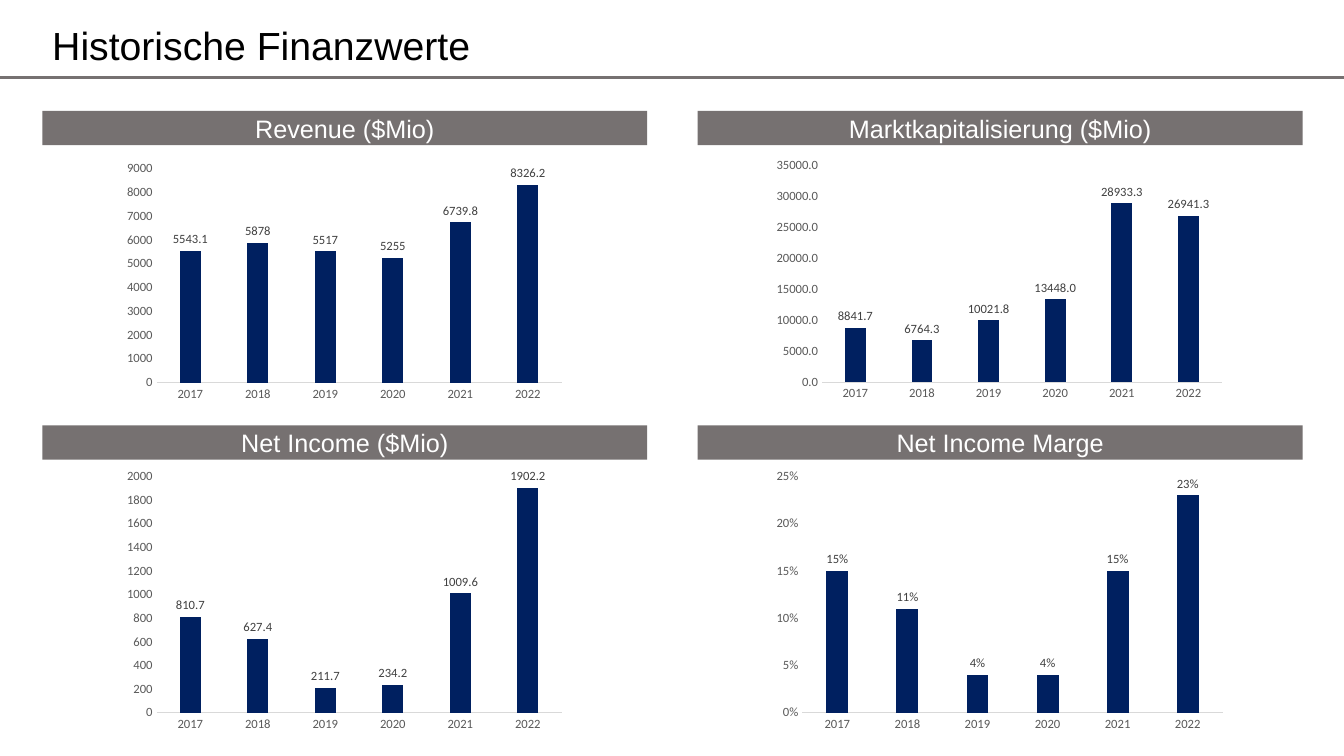
"""Build a slide with four column charts of historical financial figures."""
import pptx
import pptx.chart.data
import pptx.dml.color
import pptx.enum.chart
import pptx.enum.shapes
import pptx.enum.text
import pptx.oxml
import pptx.util

TITLE = "Historische Finanzwerte"
YEARS = ["2017", "2018", "2019", "2020", "2021", "2022"]
REVENUE = [5543.1, 5878, 5517, 5255, 6739.8, 8326.2]
MARKET_CAP = [8841.7, 6764.3, 10021.8, 13448.0, 28933.3, 26941.3]
NET_INCOME = [810.7, 627.4, 211.7, 234.2, 1009.6, 1902.2]
MARGIN = [round(income / revenue, 2) for income, revenue in zip(NET_INCOME, REVENUE)]

PANELS = [
    ("Revenue ($Mio)", REVENUE, "General", 9000, 1000, (1.17, 1.55, 4.49, 2.48)),
    ("Marktkapitalisierung ($Mio)", MARKET_CAP, "0.0", 35000, 5000, (7.61, 1.52, 4.6, 2.51)),
    ("Net Income ($Mio)", NET_INCOME, "General", 2000, 200, (1.17, 4.6, 4.49, 2.71)),
    ("Net Income Marge", MARGIN, "0%", 0.25, 0.05, (7.61, 4.6, 4.61, 2.71)),
]

WIDTH, HEIGHT = 13.33, 7.5
LEFT, TOP = 0.42, 1.1
COLUMN_STEP, ROW_STEP = 6.5, 3.12
HEADING_SIZE = (6, 0.34)
RULE_Y = 0.77

BLACK = pptx.dml.color.RGBColor(0x00, 0x00, 0x00)
WHITE = pptx.dml.color.RGBColor(0xFF, 0xFF, 0xFF)
GRAY = pptx.dml.color.RGBColor(0x76, 0x71, 0x71)
NAVY = pptx.dml.color.RGBColor(0x00, 0x20, 0x60)
AXIS_TEXT = pptx.dml.color.RGBColor(0x59, 0x59, 0x59)
AXIS_LINE = pptx.dml.color.RGBColor(0xD9, 0xD9, 0xD9)
LABEL_TEXT = pptx.dml.color.RGBColor(0x40, 0x40, 0x40)


def inches(*lengths):
    return [pptx.util.Inches(length) for length in lengths]


def set_font(font, name, size, color):
    font.name = name
    font.size = pptx.util.Pt(size)
    font.color.rgb = color


def write_text(shape, text, *, size, color, align, line_spacing=1.0):
    frame = shape.text_frame
    frame.word_wrap = True
    frame.vertical_anchor = pptx.enum.text.MSO_ANCHOR.MIDDLE
    paragraph = frame.paragraphs[0]
    paragraph.alignment = align
    paragraph.line_spacing = line_spacing
    run = paragraph.add_run()
    run.text = text
    set_font(run.font, "Arial", size, color)


def add_heading(slide, text, left, top):
    shape = slide.shapes.add_shape(
        pptx.enum.shapes.MSO_SHAPE.RECTANGLE, *inches(left, top, *HEADING_SIZE))
    shape.shadow.inherit = False
    shape.fill.solid()
    shape.fill.fore_color.rgb = GRAY
    shape.line.fill.background()
    write_text(shape, text, size=18, color=WHITE, align=pptx.enum.text.PP_ALIGN.CENTER)


def add_rule(slide):
    connector = slide.shapes.add_connector(
        pptx.enum.shapes.MSO_CONNECTOR.STRAIGHT, *inches(0, RULE_Y, WIDTH, RULE_Y))
    connector.line.color.rgb = GRAY
    connector.line.width = pptx.util.Pt(2.25)
    properties = connector._element.spPr
    properties.append(properties.makeelement(pptx.oxml.ns.qn("a:effectLst"), {}))


def add_column_chart(slide, values, number_format, maximum, step, box):
    data = pptx.chart.data.CategoryChartData(number_format=number_format)
    data.categories = YEARS
    data.add_series("Series 1", values)
    chart = slide.shapes.add_chart(
        pptx.enum.chart.XL_CHART_TYPE.COLUMN_CLUSTERED, *inches(*box), data).chart
    set_font(chart.font, "Calibri", 10, BLACK)
    chart.has_legend = False
    chart.has_title = False

    for axis in (chart.category_axis, chart.value_axis):
        axis.major_tick_mark = axis.minor_tick_mark = pptx.enum.chart.XL_TICK_MARK.NONE
        axis.has_major_gridlines = False
        set_font(axis.tick_labels.font, "Calibri", 9, AXIS_TEXT)
    chart.category_axis.format.line.color.rgb = AXIS_LINE
    chart.category_axis.format.line.width = pptx.util.Pt(0.75)
    value_axis = chart.value_axis
    value_axis.format.line.fill.background()
    value_axis.minimum_scale = 0
    value_axis.maximum_scale = maximum
    value_axis.major_unit = step
    value_axis.tick_labels.number_format = number_format
    value_axis.tick_labels.number_format_is_linked = False

    plot = chart.plots[0]
    plot.gap_width = 219
    plot.overlap = -27
    plot.vary_by_categories = False
    series = plot.series[0]
    series.format.fill.solid()
    series.format.fill.fore_color.rgb = NAVY
    labels = series.data_labels
    labels.show_value = True
    labels.position = pptx.enum.chart.XL_LABEL_POSITION.OUTSIDE_END
    labels.number_format = number_format
    labels.number_format_is_linked = False
    set_font(labels.font, "Calibri", 9, LABEL_TEXT)


def main():
    presentation = pptx.Presentation()
    presentation.slide_width, presentation.slide_height = inches(WIDTH, HEIGHT)
    slide = presentation.slides.add_slide(presentation.slide_layouts[6])
    title = slide.shapes.add_textbox(*inches(LEFT, 0.18, 12.5, 0.59))
    write_text(title, TITLE, size=28, color=BLACK,
               align=pptx.enum.text.PP_ALIGN.LEFT, line_spacing=0.9)
    add_rule(slide)
    for index, (heading, *chart_settings) in enumerate(PANELS):
        row, column = divmod(index, 2)
        add_heading(slide, heading, LEFT + column * COLUMN_STEP, TOP + row * ROW_STEP)
        add_column_chart(slide, *chart_settings)
    presentation.save("out.pptx")


if __name__ == "__main__":
    main()
